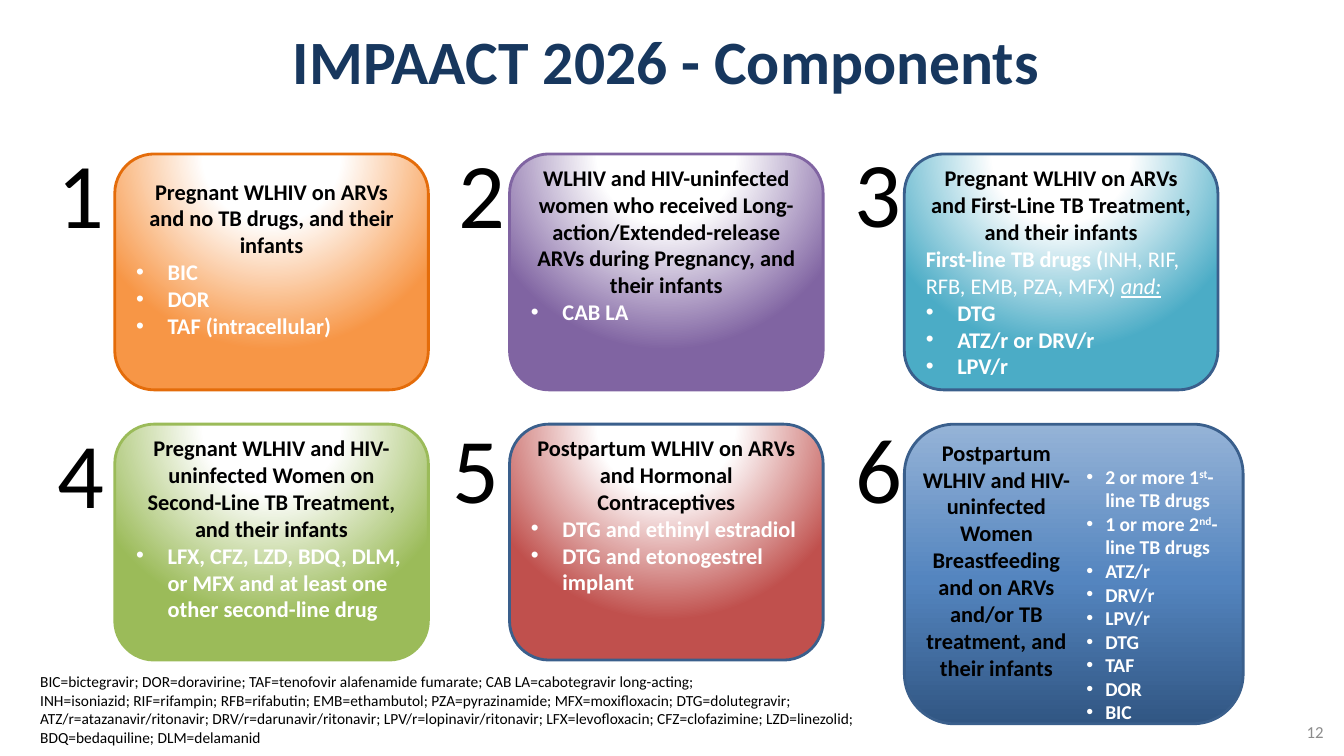
from dataclasses import dataclass

from lxml import etree
from pptx import Presentation
from pptx.dml.color import RGBColor
from pptx.enum import shapes, text
from pptx.oxml import ns
from pptx.util import Pt

CENTER, LEFT, RIGHT = text.PP_ALIGN.CENTER, text.PP_ALIGN.LEFT, text.PP_ALIGN.RIGHT
TOP, MIDDLE = text.MSO_ANCHOR.TOP, text.MSO_ANCHOR.MIDDLE


@dataclass(frozen=True)
class Theme:
    font: str = "Calibri"
    title_color: str = "17375E"
    dark: str = "000000"
    light: str = "FFFFFF"
    page_color: str = "8C8C8C"
    orange: str = "F79646"
    orange_line: str = "E46C0A"
    purple: str = "8064A2"
    teal: str = "4BACC6"
    green: str = "9BBB59"
    red: str = "C0504D"
    blue_line: str = "3A5F8C"
    blue_stops: tuple = ((0, "315683"), (48, "5485BF"), (100, "95B3D7"))
    title_size: int = 44
    number_size: int = 66
    card_size: int = 16
    list_size: int = 14
    page_size: int = 12
    note_size: int = 11


class SlideBuilder:
    def __init__(self, slide, theme):
        self.slide = slide
        self.theme = theme

    def prepare(self, shape, anchor=MIDDLE, insets=(7.2, 3.6, 7.2, 3.6)):
        frame = shape.text_frame
        frame.word_wrap = True
        frame.vertical_anchor = anchor
        (frame.margin_left, frame.margin_top,
         frame.margin_right, frame.margin_bottom) = map(Pt, insets)
        return frame

    def add_text(self, frame, content, size, color, bold=False, align=LEFT, hang=None):
        """Add a paragraph; content is a string or a list of (text, style) runs."""
        first = frame.paragraphs[0]
        paragraph = first if not first.runs else frame.add_paragraph()
        paragraph.alignment = align
        if hang:
            properties = paragraph._p.get_or_add_pPr()
            properties.set("marL", str(Pt(22.5)))
            properties.set("indent", str(-Pt(hang)))
            etree.SubElement(properties, ns.qn("a:buFont")).set("typeface", "Arial")
            etree.SubElement(properties, ns.qn("a:buChar")).set("char", "•")
        font = paragraph.font
        font.name, font.size, font.bold = self.theme.font, Pt(size), bold
        font.color.rgb = RGBColor.from_string(color)
        for words, style in [(content, "")] if isinstance(content, str) else content:
            run = paragraph.add_run()
            run.text = words
            if style in ("plain", "stress"):
                run.font.bold = False
            if style == "stress":
                run.font.italic = run.font.underline = True
            if style == "super":
                run._r.get_or_add_rPr().set("baseline", "30000")

    def text_box(self, box, paragraphs, size, color, anchor=TOP,
                 insets=(7.2, 3.6, 7.2, 3.6), **style):
        shape = self.slide.shapes.add_textbox(*map(Pt, box))
        frame = self.prepare(shape, anchor, insets)
        for content in paragraphs:
            self.add_text(frame, content, size, color, **style)

    def gradient(self, shape, stops, radial):
        """Fill with a glow from above the shape, or with a rise from the bottom."""
        shape.fill.background()
        properties = shape._element.spPr
        fill = etree.Element(ns.qn("a:gradFill"), rotWithShape="1")
        stop_list = etree.SubElement(fill, ns.qn("a:gsLst"))
        for position, color in stops:
            stop = etree.SubElement(stop_list, ns.qn("a:gs"), pos=str(position * 1000))
            etree.SubElement(stop, ns.qn("a:srgbClr"), val=color)
        if radial:
            glow = etree.SubElement(fill, ns.qn("a:path"))
            glow.set("path", "circle")
            etree.SubElement(glow, ns.qn("a:fillToRect"),
                             l="50000", t="-80000", r="50000", b="180000")
        else:
            etree.SubElement(fill, ns.qn("a:lin"), ang="16200000", scaled="0")
        properties.replace(properties.find(ns.qn("a:noFill")), fill)

    def card(self, box, stops, line, heading, radial=True, **layout):
        shape = self.slide.shapes.add_shape(
            shapes.MSO_SHAPE.ROUNDED_RECTANGLE, *map(Pt, box))
        shape.shadow.inherit = False
        self.gradient(shape, stops, radial)
        shape.line.color.rgb = RGBColor.from_string(line)
        shape.line.width = Pt(2)
        frame = self.prepare(shape, **layout)
        self.add_text(frame, heading, self.theme.card_size, self.theme.dark, True, CENTER)
        return frame


theme = Theme()

# fill, line, heading, introduction, bullets, free lines at the bottom
CARDS = [
    (theme.orange, theme.orange_line,
     "Pregnant WLHIV on ARVs and no TB drugs, and their infants",
     None, ["BIC", "DOR", "TAF (intracellular)"], 1),
    (theme.purple, theme.purple,
     "WLHIV and HIV-uninfected women who received Long-action/Extended-release "
     "ARVs during Pregnancy, and their infants",
     None, ["CAB LA"], 2),
    (theme.teal, theme.blue_line,
     "Pregnant WLHIV on ARVs and First-Line TB Treatment, and their infants",
     [("First-line TB drugs (", ""), ("INH, RIF, RFB, EMB, PZA, MFX) ", "plain"),
      ("and:", "stress")],
     ["DTG", "ATZ/r or DRV/r", "LPV/r"], 0),
    (theme.green, theme.green,
     "Pregnant WLHIV and HIV-uninfected Women on Second-Line TB Treatment, "
     "and their infants",
     None, ["LFX, CFZ, LZD, BDQ, DLM, or MFX and at least one other second-line drug"], 1),
    (theme.red, theme.blue_line,
     "Postpartum WLHIV on ARVs and Hormonal Contraceptives",
     None, ["DTG and ethinyl estradiol", "DTG and etonogestrel implant"], 2),
]
POSTPARTUM_HEADING = ("Postpartum WLHIV and HIV-uninfected Women Breastfeeding "
                      "and on ARVs and/or TB treatment, and their infants")
POSTPARTUM_DRUGS = [
    [("2 or more 1", ""), ("st", "super"), ("-line TB drugs", "")],
    [("1 or more 2", ""), ("nd", "super"), ("-line TB drugs", "")],
    "ATZ/r", "DRV/r", "LPV/r", "DTG", "TAF", "DOR", "BIC",
]
ABBREVIATIONS = [
    "BIC=bictegravir; DOR=doravirine; TAF=tenofovir alafenamide fumarate; "
    "CAB LA=cabotegravir long-acting;",
    "INH=isoniazid; RIF=rifampin; RFB=rifabutin; EMB=ethambutol; PZA=pyrazinamide; "
    "MFX=moxifloxacin; DTG=dolutegravir; ATZ/r=atazanavir/ritonavir; "
    "DRV/r=darunavir/ritonavir; LPV/r=lopinavir/ritonavir; LFX=levofloxacin; "
    "CFZ=clofazimine; LZD=linezolid; BDQ=bedaquiline; DLM=delamanid",
]
NUMBER_PLACES = [(34, 93.6), (320.4, 93.6), (603.4, 93),
                 (34, 293.8), (316, 290.2), (604, 290.2)]
LINE_HEIGHT = 19.5


def card_corner(index):
    row, column = divmod(index, 3)
    return 82 + 282 * column, 110 + 193 * row


def main():
    presentation = Presentation()
    presentation.slide_width, presentation.slide_height = Pt(960), Pt(540)
    slide = presentation.slides.add_slide(presentation.slide_layouts[6])
    builder = SlideBuilder(slide, theme)

    builder.text_box((44, -2, 864, 90), ["IMPAACT 2026 - Components"], theme.title_size,
                     theme.title_color, MIDDLE, bold=True, align=CENTER)
    builder.text_box((728.6, 508.3, 224, 28.8), ["12"], theme.page_size,
                     theme.page_color, MIDDLE, align=RIGHT)
    builder.text_box((21.6, 476.6, 600, 60.5), ABBREVIATIONS, theme.note_size, theme.dark)

    for index, (fill, line, heading, introduction, bullets, free) in enumerate(CARDS):
        stops = ((0, theme.light), (35, theme.light), (100, fill))
        frame = builder.card((*card_corner(index), 224, 168.5), stops, line, heading,
                             insets=(7.2, 3.6, 7.2, 3.6 + free * LINE_HEIGHT))
        if introduction:
            builder.add_text(frame, introduction, theme.card_size, theme.light, True)
        for bullet in bullets:
            builder.add_text(frame, bullet, theme.card_size, theme.light, True, hang=22.5)

    left, top = card_corner(5)
    builder.card((left, top, 242, 214), theme.blue_stops, theme.blue_line,
                 POSTPARTUM_HEADING, radial=False, anchor=TOP, insets=(0, 0, 110.5, 0))
    builder.text_box((left + 121, top + 29, 110.5, 188), POSTPARTUM_DRUGS, theme.list_size,
                     theme.light, insets=(0, 0, 0, 0), bold=True, hang=13.5)

    for number, (left, top) in enumerate(NUMBER_PLACES, 1):
        builder.text_box((left, top, 38.2, 87), [str(number)],
                         theme.number_size, theme.dark)

    presentation.save("out.pptx")


if __name__ == "__main__":
    main()
